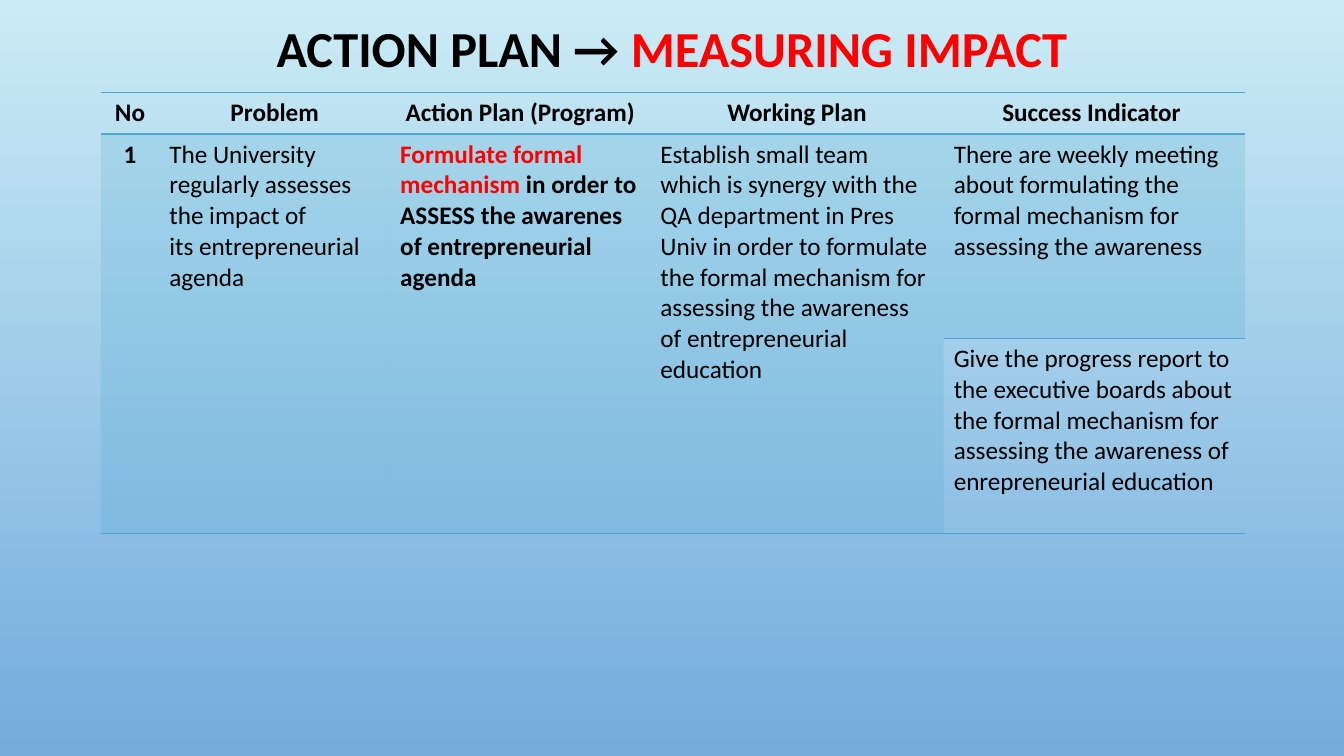
import pptx
import pptx.util
import pptx.dml.color
import pptx.enum.text
import pptx.oxml
import pptx.oxml.ns
from dataclasses import dataclass

Inches = pptx.util.Inches
ALIGN = pptx.enum.text.PP_ALIGN


@dataclass(frozen=True)
class Theme:
    font: str = "Calibri"
    text: str = "000000"
    accent: str = "FF0000"
    table: str = "48A8D0"
    sky_top: str = "CBECF5"
    sky_bottom: str = "73ABDD"
    title_size: int = 36
    table_size: int = 18
    rule_width: int = 1
    tint_percent: int = 20


THEME = Theme()

# Content: a cell is a list of paragraphs, a paragraph a list of (text, colour)
TITLE = [("ACTION PLAN → ", THEME.text), ("MEASURING IMPACT", THEME.accent)]
HEADINGS = ["No", "Problem", "Action Plan (Program)", "Working Plan", "Success Indicator "]
PLAN = [
    [[("1", THEME.text)]],
    [[("The University regularly assesses the impact of", THEME.text)],
     [("its entrepreneurial agenda", THEME.text)]],
    [[("Formulate formal mechanism ", THEME.accent),
      ("in order to ASSESS the awarenes of entrepreneurial agenda", THEME.text)]],
    [[("Establish small team which is synergy with the QA department in Pres Univ "
       "in order to formulate the formal mechanism for assessing the awareness "
       "of entrepreneurial education", THEME.text)]],
    [[("There are weekly meeting about formulating the formal mechanism "
       "for assessing the awareness", THEME.text)]],
]
SECOND_INDICATOR = [[("Give the progress report to the executive boards about the formal "
                      "mechanism for assessing the awareness of enrepreneurial education",
                      THEME.text)]]
BOLD_COLUMNS = (0, 2)
CENTRED_COLUMNS = (0,)
COLUMN_WIDTHS = [0.58, 2.29, 2.58, 2.91, 2.99]
ROW_HEIGHTS = [0.41, 2.03, 1.93]
LEFT, TABLE_TOP, WIDTH = 1, 0.92, 11.33
TITLE_TOP, TITLE_HEIGHT = 0.18, 0.65
NO_STYLE_NO_GRID = "{2D5ABB26-0587-4C30-8999-92F81FD0307C}"


def rgb(value):
    return pptx.dml.color.RGBColor.from_string(value)


def write_paragraph(paragraph, runs, size, bold, alignment):
    paragraph.alignment = alignment
    for text, colour in runs:
        run = paragraph.add_run()
        run.text = text
        run.font.name = THEME.font
        run.font.size = pptx.util.Pt(size)
        run.font.bold = bold
        run.font.color.rgb = rgb(colour)


def write_cell(cell, paragraphs, bold, centred):
    for index, runs in enumerate(paragraphs):
        frame = cell.text_frame
        paragraph = frame.paragraphs[0] if index == 0 else frame.add_paragraph()
        write_paragraph(paragraph, runs, THEME.table_size, bold,
                        ALIGN.CENTER if centred else ALIGN.LEFT)


def tint_cell(cell):
    cell.fill.solid()
    cell.fill.fore_color.rgb = rgb(THEME.table)
    colour = cell.fill._xPr.find(".//" + pptx.oxml.ns.qn("a:srgbClr"))
    colour.append(pptx.oxml.parse_xml(
        f'<a:alpha {pptx.oxml.ns.nsdecls("a")} val="{THEME.tint_percent * 1000}"/>'))


def rule_cell(cell, sides):
    """Draw rules on the given sides, listed in the order lnT, lnB."""
    properties = cell._tc.get_or_add_tcPr()
    for index, side in enumerate(sides):
        properties.insert(index, pptx.oxml.parse_xml(
            f'<a:{side} {pptx.oxml.ns.nsdecls("a")} w="{pptx.util.Pt(THEME.rule_width)}">'
            f'<a:solidFill><a:srgbClr val="{THEME.table}"/></a:solidFill></a:{side}>'))


def paint_background(slide):
    fill = slide.background.fill
    fill.gradient()
    fill.gradient_angle = 270
    for stop, colour, position in zip(fill.gradient_stops,
                                      (THEME.sky_top, THEME.sky_bottom), (0, 1)):
        stop.color.rgb = rgb(colour)
        stop.position = position


def add_title(slide):
    title = slide.shapes.title
    title.left, title.top = Inches(LEFT), Inches(TITLE_TOP)
    title.width, title.height = Inches(WIDTH), Inches(TITLE_HEIGHT)
    frame = title.text_frame
    frame.auto_size = pptx.enum.text.MSO_AUTO_SIZE.NONE
    frame.vertical_anchor = pptx.enum.text.MSO_ANCHOR.MIDDLE
    frame.paragraphs[0].line_spacing = 0.9
    write_paragraph(frame.paragraphs[0], TITLE, THEME.title_size, True, ALIGN.CENTER)


def add_plan_table(slide):
    frame = slide.shapes.add_table(
        len(ROW_HEIGHTS), len(COLUMN_WIDTHS), Inches(LEFT), Inches(TABLE_TOP),
        Inches(WIDTH), Inches(sum(ROW_HEIGHTS)))
    table = frame.table
    table.first_row = table.horz_banding = False
    table._tbl.tblPr.find(pptx.oxml.ns.qn("a:tableStyleId")).text = NO_STYLE_NO_GRID
    for column, width in zip(table.columns, COLUMN_WIDTHS):
        column.width = Inches(width)
    for row, height in zip(table.rows, ROW_HEIGHTS):
        row.height = Inches(height)

    # Fills and rules: every column but the last spans both body rows
    last = len(COLUMN_WIDTHS) - 1
    for column in range(len(COLUMN_WIDTHS)):
        header, upper, lower = (table.cell(row, column) for row in range(3))
        header.fill.background()
        tint_cell(upper)
        if column < last:
            tint_cell(lower)
            upper.merge(lower)
            rule_cell(upper, ["lnT", "lnB"])
        else:
            lower.fill.background()
            rule_cell(upper, ["lnT"])
        rule_cell(header, ["lnT", "lnB"])
        rule_cell(lower, ["lnB"])

        # Text
        write_cell(header, [[(HEADINGS[column], THEME.text)]], True, True)
        write_cell(upper, PLAN[column], column in BOLD_COLUMNS, column in CENTRED_COLUMNS)
    write_cell(table.cell(2, last), SECOND_INDICATOR, False, False)


def main():
    presentation = pptx.Presentation()
    presentation.slide_width, presentation.slide_height = Inches(13.33), Inches(7.5)
    slide = presentation.slides.add_slide(presentation.slide_layouts[5])
    paint_background(slide)
    add_plan_table(slide)
    add_title(slide)
    presentation.save("out.pptx")


if __name__ == "__main__":
    main()
